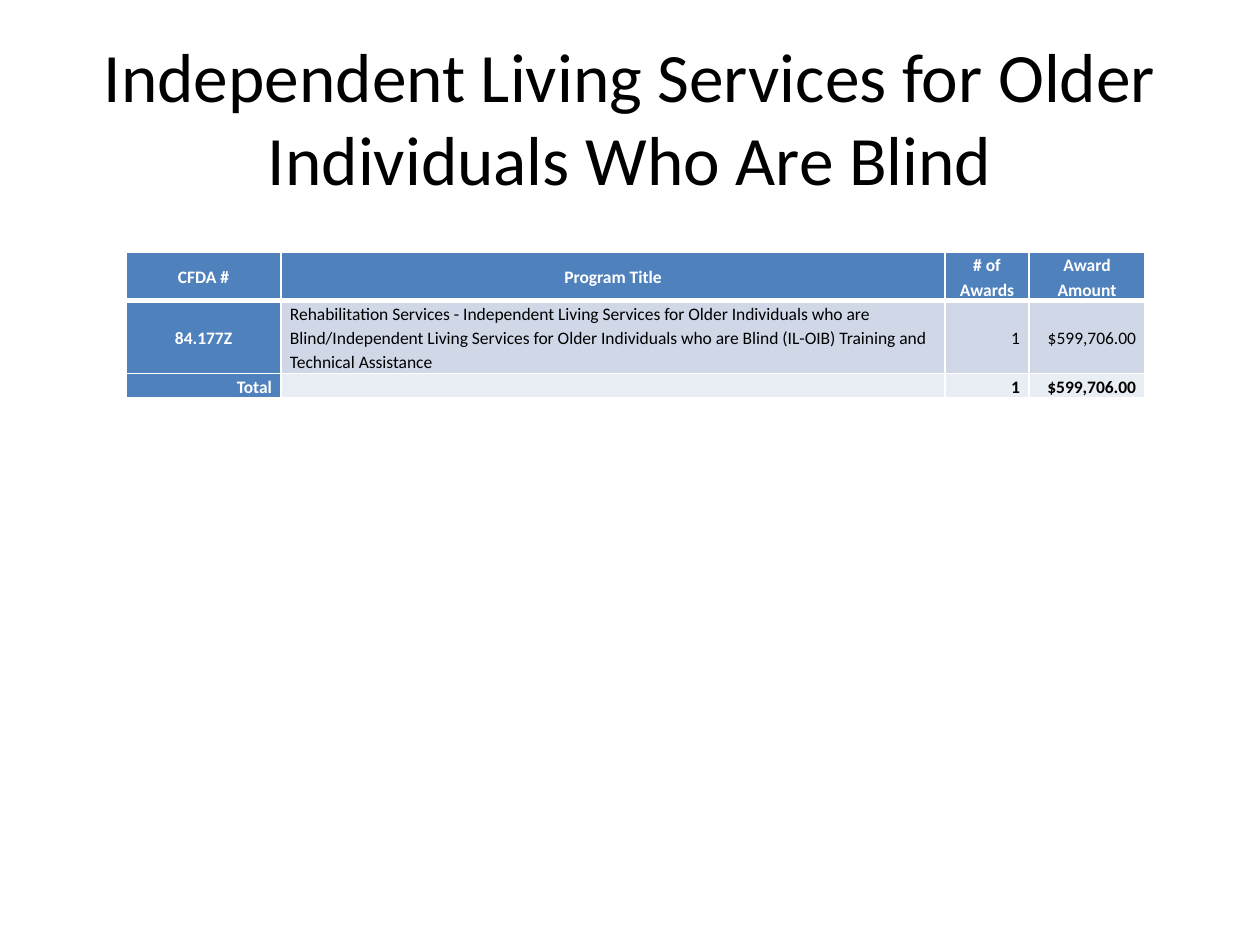
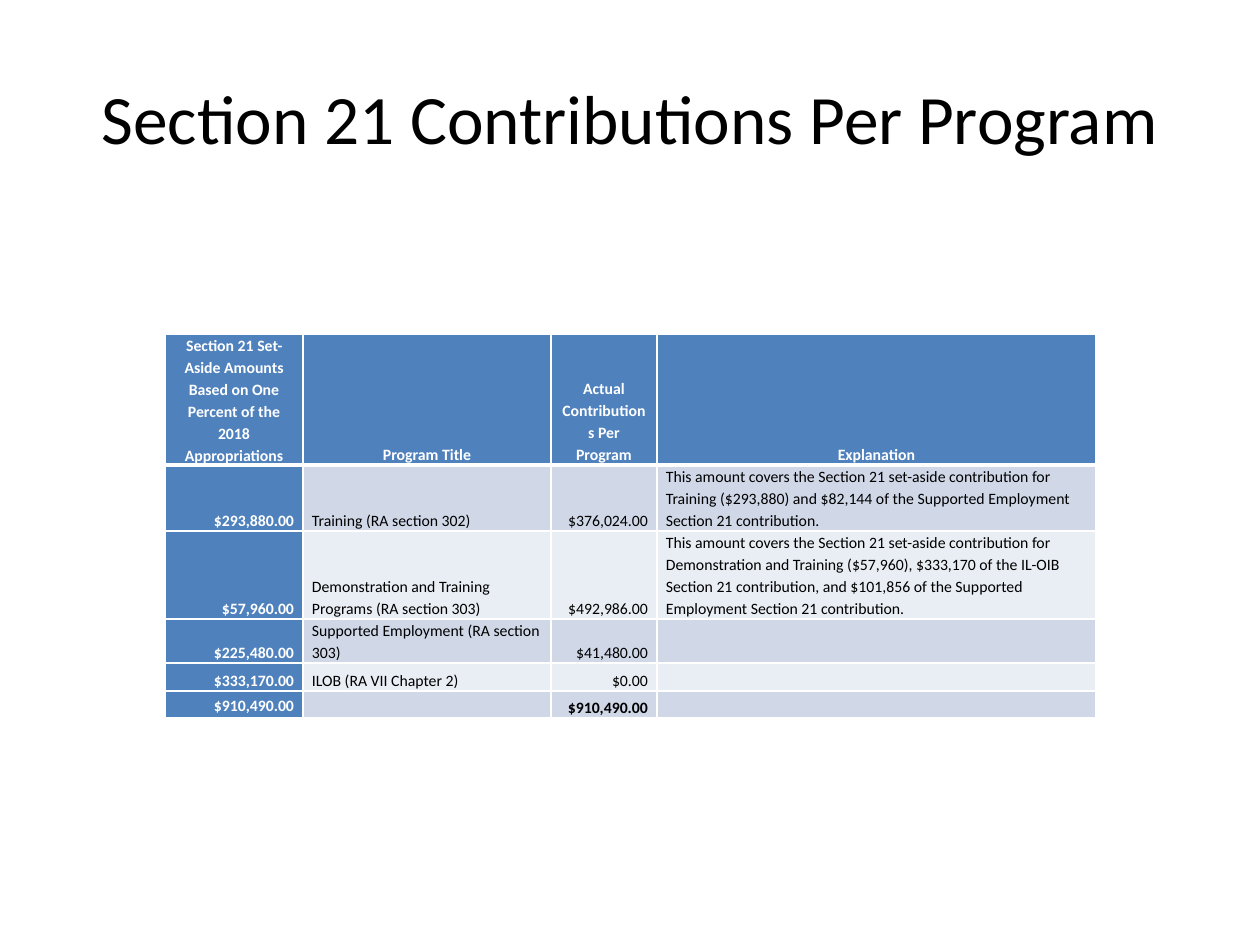
from lxml import etree
from pptx import Presentation
from pptx import util as u
from pptx.dml.color import RGBColor
from pptx.enum import text
from pptx.oxml.ns import qn

FONT = "Calibri"
BLACK, WHITE, BLUE = "000000", "FFFFFF", "4F81BD"
BANDS = ["D0D8E8", "E9EDF4"]
ALIGN = {
    "l": text.PP_ALIGN.LEFT,
    "c": text.PP_ALIGN.CENTER,
    "r": text.PP_ALIGN.RIGHT,
}
ANCHOR = {"m": text.MSO_ANCHOR.MIDDLE, "b": text.MSO_ANCHOR.BOTTOM}


def px(n):
    return u.Emu(round(n * 914400 / 126))


def rgb(code):
    return RGBColor.from_string(code)


def add_run(para, words, size, color, bold=False):
    run = para.add_run()
    run.text = words
    font = run.font
    font.name, font.size, font.bold = FONT, u.Pt(size), bold
    font.color.rgb = rgb(color)


def add_title(slide, words):
    box = slide.shapes.add_textbox(px(63), px(38), px(1134), px(157))
    frame = box.text_frame
    frame.word_wrap = True
    frame.vertical_anchor = ANCHOR["m"]
    para = frame.paragraphs[0]
    para.alignment = ALIGN["c"]
    add_run(para, words, 39.6, BLACK)


def set_edges(cell, row):
    props = cell._tc.get_or_add_tcPr()
    widths = {"L": 1, "R": 1, "T": 3 if row == 1 else 1, "B": 3 if row == 0 else 1}
    for spot, (side, width) in enumerate(widths.items()):
        line = etree.Element(qn("a:ln" + side), w=str(u.Pt(width)))
        fill = etree.SubElement(line, qn("a:solidFill"))
        etree.SubElement(fill, qn("a:srgbClr"), val=WHITE)
        props.insert(spot, line)


def fill_cell(cell, words, row, col, last, size, align, anchor):
    label = row == 0 or col == 0
    cell.fill.solid()
    cell.fill.fore_color.rgb = rgb(BLUE if label else BANDS[(row - 1) % 2])
    set_edges(cell, row)
    cell.margin_left = cell.margin_right = px(9)
    cell.margin_top = cell.margin_bottom = 0
    cell.vertical_anchor = ANCHOR[anchor]
    para = cell.text_frame.paragraphs[0]
    para.alignment = ALIGN[align]
    para.line_spacing = 1.15
    if words:
        add_run(para, words, size, WHITE if label else BLACK, label or last)
    else:
        para._p.get_or_add_endParaRPr().set("sz", str(size * 100))


def add_table(slide, left, top, cols, highs, size, rows):
    frame = slide.shapes.add_table(
        len(rows), len(cols), px(left), px(top), px(sum(cols)), px(sum(highs))
    )
    table = frame.table
    for col, width in enumerate(cols):
        table.columns[col].width = px(width)
    for row, (aligns, anchors, cells) in enumerate(rows):
        table.rows[row].height = px(highs[row])
        last = row == len(rows) - 1
        for col, words in enumerate(cells):
            fill_cell(table.cell(row, col), words, row, col, last, size,
                      aligns[col], anchors[col])


AWARDS = [
    ("cccc", "mmmm", ["CFDA #", "Program Title", "# of Awards", "Award Amount"]),
    ("clrr", "mmmm", [
        "84.177Z",
        "Rehabilitation Services - Independent Living Services for Older "
        "Individuals who are Blind/Independent Living Services for Older "
        "Individuals who are Blind (IL-OIB) Training and Technical Assistance",
        "1", "$599,706.00"]),
    ("rlrr", "bbbb", ["Total", "", "1", "$599,706.00"]),
]

SHARES = [
    ("cccc", "bbbb", [
        "Section 21 Set-Aside Amounts Based on One Percent of the 2018 Appropriations",
        "Program Title", "Actual Contributions Per Program", "Explanation"]),
    ("rlrl", "bbbb", [
        "$293,880.00", "Training (RA section 302)", "$376,024.00",
        "This amount covers the Section 21 set-aside contribution for Training "
        "($293,880) and $82,144 of the Supported Employment Section 21 contribution."]),
    ("rlrl", "bbbb", [
        "$57,960.00", "Demonstration and Training Programs (RA section 303)",
        "$492,986.00",
        "This amount covers the Section 21 set-aside contribution for Demonstration "
        "and Training ($57,960), $333,170 of the IL-OIB Section 21 contribution, and "
        "$101,856 of the Supported Employment Section 21 contribution."]),
    ("rlrl", "bmbb", [
        "$225,480.00", "Supported Employment (RA section 303)", "$41,480.00", ""]),
    ("rlrl", "bbbb", ["$333,170.00", "ILOB (RA VII Chapter 2)", "$0.00", ""]),
    ("rlrl", "mbbb", ["$910,490.00", "", "$910,490.00", ""]),
]


def main():
    deck = Presentation()
    deck.slide_width, deck.slide_height = px(1260), px(945)
    blank = deck.slide_layouts[6]

    slide = deck.slides.add_slide(blank)
    add_title(slide, "Independent Living Services for Older Individuals Who Are Blind")
    add_table(slide, 126, 252, [155, 664, 84, 116], [48, 73, 24], 10, AWARDS)

    slide = deck.slides.add_slide(blank)
    add_title(slide, "Section 21 Contributions Per Program")
    add_table(slide, 165, 334, [138, 248, 106, 439],
              [131, 66, 88, 44, 28, 27], 9, SHARES)

    deck.save("out.pptx")


if __name__ == "__main__":
    main()
